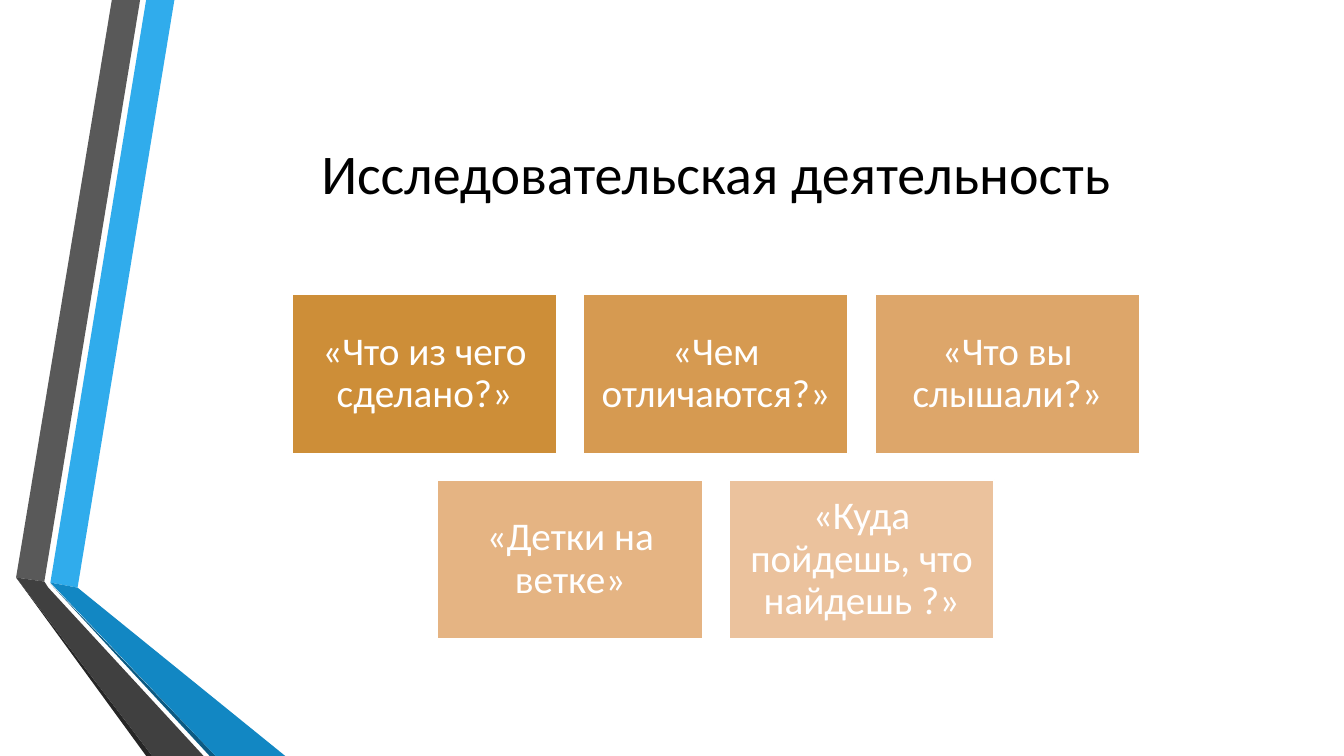
from dataclasses import dataclass

from pptx import Presentation
from pptx.dml.color import RGBColor
from pptx.enum.shapes import MSO_SHAPE as Preset
from pptx.enum.text import MSO_ANCHOR as Anchor, PP_ALIGN as Align
from pptx.util import Inches, Pt


@dataclass(frozen=True)
class Theme:
    font: str = "Calibri"
    title_size: int = 40
    card_size: int = 28
    title_color: str = "000000"
    card_text: str = "FFFFFF"
    card_line: str = "FFFFFF"
    card_fills: tuple = ("CD8E38", "D69A51", "DDA66A", "E5B483", "EBC29D")
    blue: str = "30ACEC"
    blue_fold: str = "1287C3"
    blue_edge: str = "0C5A82"
    gray: str = "595959"
    gray_fold: str = "404040"
    gray_edge: str = "262626"


THEME = Theme()
WIDTH, HEIGHT = 13.33, 7.5

# Card grid, in inches: every row is centred on the title's axis
CENTER_X = 7.1
GRID_TOP = 2.92
CARD_WIDTH, CARD_HEIGHT, GAP = 2.63, 1.58, 0.26
CARD_INSET = 0.12

CARD_ROWS = (
    ("«Что из чего сделано?»", "«Чем отличаются?»", "«Что вы слышали?»"),
    ("«Детки на ветке»", "«Куда пойдешь, что найдешь ?»"),
)

# Folded ribbons along the left edge: colour and corner points
RIBBONS = (
    (THEME.blue, ((0.5, 5.78), (0.77, 5.83), (1.73, 0), (1.45, 0))),
    (THEME.gray, ((1.39, 0), (1.11, 0), (0.16, 5.73), (0.44, 5.77))),
    (THEME.gray_edge, ((0.16, 5.73), (1.45, HEIGHT), (1.51, HEIGHT))),
    (THEME.blue_edge, ((0.5, 5.79), (2.08, HEIGHT), (2.14, HEIGHT))),
    (THEME.blue_fold, ((0.5, 5.78), (2.14, HEIGHT), (2.83, HEIGHT), (0.77, 5.83))),
    (THEME.gray_fold, ((2.02, HEIGHT), (0.48, 5.83), (0.44, 5.77), (0.16, 5.73),
                       (1.51, HEIGHT))),
)


def paint(shape, color):
    shape.shadow.inherit = False
    shape.fill.solid()
    shape.fill.fore_color.rgb = RGBColor.from_string(color)


def write(shape, text, size, color, inset, line_spacing=1.0):
    frame = shape.text_frame
    frame.text = text
    frame.word_wrap = True
    frame.vertical_anchor = Anchor.MIDDLE
    frame.margin_left = frame.margin_right = Inches(inset)
    frame.margin_top = frame.margin_bottom = Inches(inset)
    paragraph = frame.paragraphs[0]
    paragraph.alignment = Align.CENTER
    paragraph.line_spacing = line_spacing
    font = paragraph.runs[0].font
    font.name, font.size = THEME.font, Pt(size)
    font.color.rgb = RGBColor.from_string(color)


def add_ribbon(slide, color, points):
    corners = [(Inches(x), Inches(y)) for x, y in points]
    builder = slide.shapes.build_freeform(*corners[0])
    builder.add_line_segments(corners[1:], close=True)
    ribbon = builder.convert_to_shape()
    paint(ribbon, color)
    ribbon.line.fill.background()


def add_title(slide, text):
    width = 10.96
    title = slide.shapes.add_textbox(
        Inches(CENTER_X - width / 2), Inches(HEIGHT * 0.1),
        Inches(width), Inches(1.92))
    write(title, text, THEME.title_size, THEME.title_color, inset=0.05)


def add_card(slide, left, top, text, fill):
    card = slide.shapes.add_shape(
        Preset.RECTANGLE, Inches(left), Inches(top),
        Inches(CARD_WIDTH), Inches(CARD_HEIGHT))
    paint(card, fill)
    card.line.color.rgb = RGBColor.from_string(THEME.card_line)
    card.line.width = Pt(1.25)
    write(card, text, THEME.card_size, THEME.card_text, CARD_INSET, 0.9)


def add_card_grid(slide, rows):
    fills = iter(THEME.card_fills)
    for row, texts in enumerate(rows):
        row_width = len(texts) * (CARD_WIDTH + GAP) - GAP
        top = GRID_TOP + row * (CARD_HEIGHT + GAP)
        for column, text in enumerate(texts):
            left = CENTER_X - row_width / 2 + column * (CARD_WIDTH + GAP)
            add_card(slide, left, top, text, next(fills))


def main():
    presentation = Presentation()
    presentation.slide_width = Inches(WIDTH)
    presentation.slide_height = Inches(HEIGHT)
    slide = presentation.slides.add_slide(presentation.slide_layouts[6])
    for color, points in RIBBONS:
        add_ribbon(slide, color, points)
    add_title(slide, "Исследовательская деятельность")
    add_card_grid(slide, CARD_ROWS)
    presentation.save("out.pptx")


if __name__ == "__main__":
    main()
